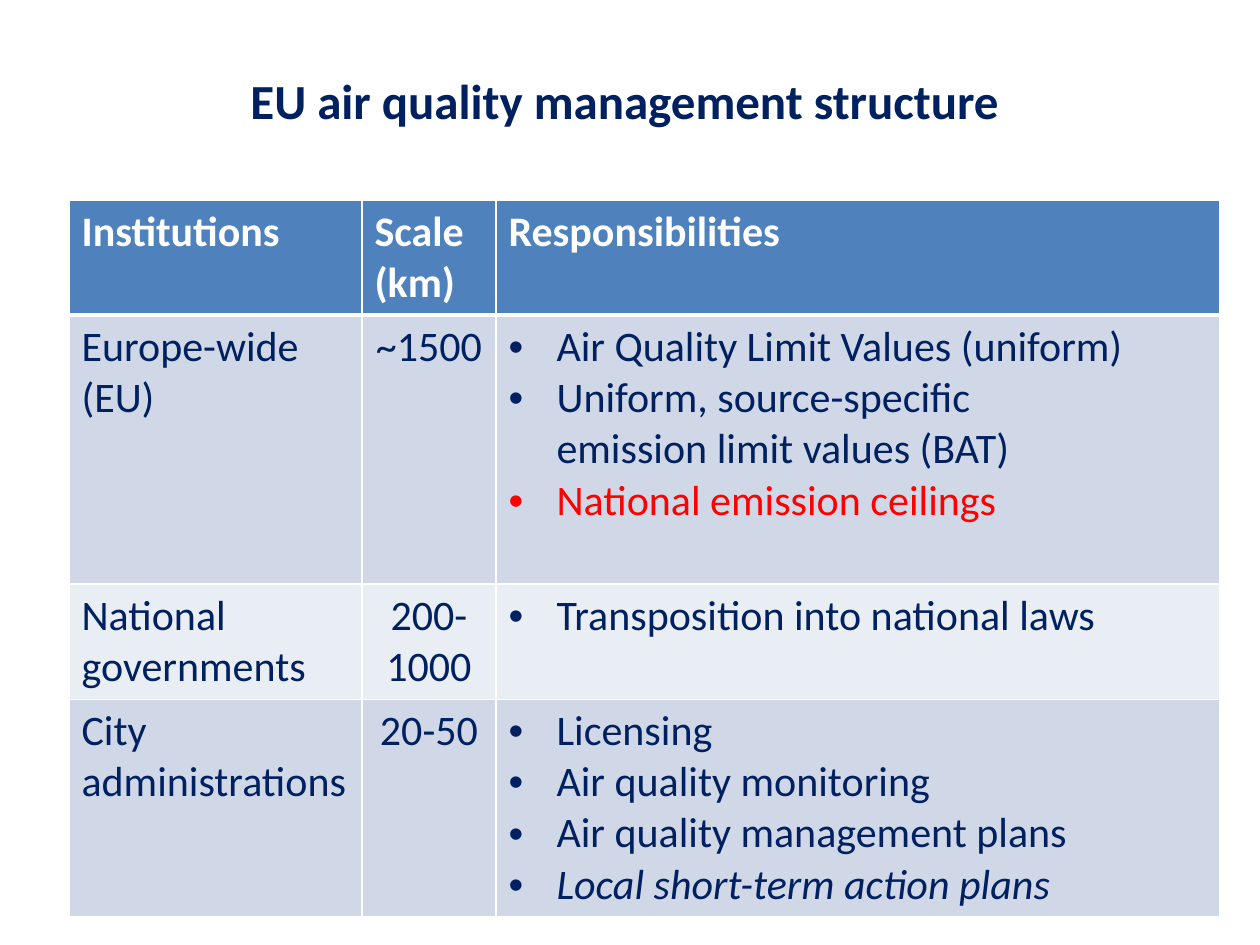
import pptx
import pptx.dml.color
import pptx.enum.text
import pptx.oxml
import pptx.oxml.ns
import pptx.util
from dataclasses import dataclass

SCALE = 914400 / 126


@dataclass(frozen=True)
class Theme:
    font: str = "Calibri"
    title: int = 28
    body: int = 24
    navy: str = "002060"
    red: str = "FF0000"
    white: str = "FFFFFF"
    head: str = "4F81BD"
    bands: tuple = ("D0D8E8", "E9EDF4")


THEME = Theme()
ALIGN = pptx.enum.text.PP_ALIGN
HEAD = ("Institutions", "Scale (km)", "Responsibilities")
ROWS = (
    ("Europe-wide (EU)", "~1500", (
        ("Air Quality Limit Values (uniform)", {}),
        ("Uniform, source-specific \nemission limit values (BAT)", {}),
        ("National emission ceilings", {"color": THEME.red}))),
    ("National governments", "200-1000", (
        ("Transposition into national laws", {}),)),
    ("City administrations", "20-50", (
        ("Licensing", {}),
        ("Air quality monitoring", {}),
        ("Air quality management plans", {}),
        ("Local short-term action plans", {"italic": True}))),
)
WIDTHS = (293, 134, 724)
HEIGHTS = (115, 269, 115, 218)


def px(num):
    return pptx.util.Emu(round(num * SCALE))


def rgb(code):
    return pptx.dml.color.RGBColor.from_string(code)


def write(para, text, size=THEME.body, color=THEME.navy, bold=False, italic=False):
    """Add text to a paragraph, one run per line."""
    for num, line in enumerate(text.split("\n")):
        if num:
            para.add_line_break()
        run = para.add_run()
        run.text = line
        font = run.font
        font.name, font.size = THEME.font, pptx.util.Pt(size)
        font.bold, font.italic = bold, italic
        font.color.rgb = rgb(color)


def add_bullet(para):
    props = para._p.get_or_add_pPr()
    props.set("marL", str(px(48)))
    props.set("indent", str(-px(48)))
    space = pptx.oxml.ns.nsdecls("a")
    props.append(pptx.oxml.parse_xml(f'<a:buFont {space} typeface="Arial"/>'))
    props.append(pptx.oxml.parse_xml(f'<a:buChar {space} char="•"/>'))


def style_cell(cell, fill, top, bottom):
    """Set white borders, with top and bottom widths in points, and the fill."""
    props = cell._tc.get_or_add_tcPr()
    for side, width in (("L", 1), ("R", 1), ("T", top), ("B", bottom)):
        props.append(pptx.oxml.parse_xml(
            f'<a:ln{side} {pptx.oxml.ns.nsdecls("a")} w="{pptx.util.Pt(width)}">'
            f'<a:solidFill><a:srgbClr val="{THEME.white}"/></a:solidFill></a:ln{side}>'))
    cell.fill.solid()
    cell.fill.fore_color.rgb = rgb(fill)


def fill_list(frame, items):
    for num, (text, look) in enumerate(items):
        para = frame.add_paragraph() if num else frame.paragraphs[0]
        add_bullet(para)
        write(para, text, **look)


def add_title(slide, left, top, width, height):
    title = slide.shapes.title
    title.left, title.top = px(left), px(top)
    title.width, title.height = px(width), px(height)
    frame = title.text_frame
    frame.vertical_anchor = pptx.enum.text.MSO_ANCHOR.MIDDLE
    para = frame.paragraphs[0]
    para.alignment = ALIGN.CENTER
    write(para, "EU air quality management structure ", THEME.title, bold=True)


def add_grid(slide, left, top):
    """Place the table of institutions with its top left corner given."""
    grid = slide.shapes.add_table(
        len(HEIGHTS), len(WIDTHS), px(left), px(top),
        px(sum(WIDTHS)), px(sum(HEIGHTS))).table
    for col, width in zip(grid.columns, WIDTHS):
        col.width = px(width)
    for row, height in zip(grid.rows, HEIGHTS):
        row.height = px(height)

    for cell, text in zip(grid.rows[0].cells, HEAD):
        style_cell(cell, THEME.head, 1, 3)
        write(cell.text_frame.paragraphs[0], text, color=THEME.white, bold=True)

    for num, (body, reach, tasks) in enumerate(ROWS):
        cells = list(grid.rows[num + 1].cells)
        for cell in cells:
            style_cell(cell, THEME.bands[num % 2], 1 if num else 3, 1)
        frames = [cell.text_frame for cell in cells]
        write(frames[0].paragraphs[0], body)
        frames[1].paragraphs[0].alignment = ALIGN.CENTER
        write(frames[1].paragraphs[0], reach)
        fill_list(frames[2], tasks)


def main():
    deck = pptx.Presentation()
    deck.slide_width, deck.slide_height = px(1260), px(945)
    slide = deck.slides.add_slide(deck.slide_layouts[5])
    add_title(slide, 63, 21, 1134, 158)
    add_grid(slide, 69, 200)
    deck.save("out.pptx")


if __name__ == "__main__":
    main()
